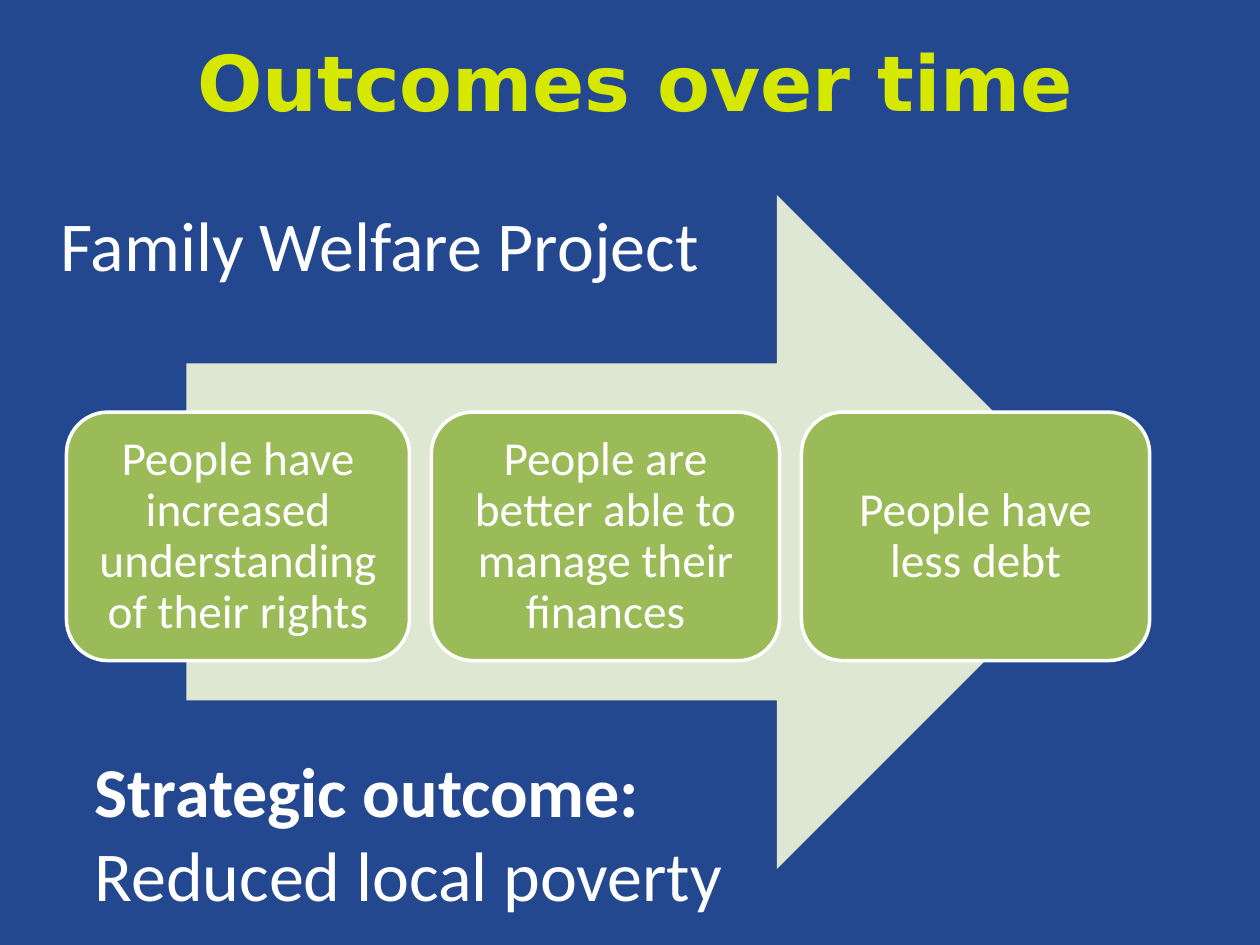
"""Build the "Outcomes over time" slide."""
from lxml import etree
from pptx import Presentation
from pptx.dml.color import RGBColor
from pptx.enum.shapes import MSO_SHAPE
from pptx.enum.text import MSO_ANCHOR, MSO_AUTO_SIZE, PP_ALIGN
from pptx.oxml.ns import qn
from pptx.util import Pt

ARROW, CARD = MSO_SHAPE.RIGHT_ARROW, MSO_SHAPE.ROUNDED_RECTANGLE
TOP, MIDDLE, BOTTOM = MSO_ANCHOR.TOP, MSO_ANCHOR.MIDDLE, MSO_ANCHOR.BOTTOM
LEFT, CENTER = PP_ALIGN.LEFT, PP_ALIGN.CENTER
NO_FIT, GROW = MSO_AUTO_SIZE.NONE, MSO_AUTO_SIZE.SHAPE_TO_FIT_TEXT

NAVY, LIME, WHITE = "244890", "D7E800", "FFFFFF"
PALE_GREEN, GREEN = "DEE7D1", "9BBB59"

CARD_LEFT, CARD_TOP, CARD_HEIGHT, CARD_GAP = 38, 235.5, 142, 12.5
CARDS = [
    ("People have increased understanding of their rights", 196, 7),
    ("People are better able to manage their finances", 199, 2),
    ("People have less debt", 199, 22),
]


def rgb(value):
    """Return the colour for a hex string."""
    return RGBColor.from_string(value)


def add_run(p, text, size=40, font="Calibri", color=WHITE, bold=False):
    """Append a formatted run to a paragraph."""
    r = p.add_run()
    r.text = text
    r.font.size, r.font.name, r.font.bold = Pt(size), font, bold
    r.font.color.rgb = rgb(color)


def set_text(sp, text, align=LEFT, anchor=TOP, fit=NO_FIT, spacing=1.0, **font):
    """Write one paragraph into a shape and return it."""
    tf = sp.text_frame
    tf.word_wrap, tf.auto_size, tf.vertical_anchor = True, fit, anchor
    p = tf.paragraphs[0]
    p.alignment, p.line_spacing, p.space_before = align, spacing, Pt(0)
    add_run(p, text, **font)
    return p


def place(sp, left, top, width, height):
    """Move and size a shape in points."""
    sp.left, sp.top, sp.width, sp.height = map(Pt, (left, top, width, height))
    return sp


def remove_bullet(p):
    """Take the bullet and hanging indent off a paragraph."""
    pPr = p._p.get_or_add_pPr()
    pPr.set("marL", "0")
    pPr.set("indent", "0")
    etree.SubElement(pPr, qn("a:buNone"))


def add_shape(s, kind, box, fill, line=None):
    """Add a flat preset shape, outlined if a line colour is given."""
    sp = s.shapes.add_shape(kind, *map(Pt, box))
    sp.shadow.inherit = False
    sp.fill.solid()
    sp.fill.fore_color.rgb = rgb(fill)
    if line:
        sp.line.color.rgb = rgb(line)
        sp.line.width = Pt(2)
    else:
        sp.line.fill.background()
    return sp


def add_cards(s):
    """Add the row of outcome cards."""
    left = CARD_LEFT
    for text, width, pad in CARDS:
        sp = add_shape(s, CARD, (left, CARD_TOP, width, CARD_HEIGHT), GREEN, WHITE)
        tf = sp.text_frame
        tf.margin_left = tf.margin_right = Pt(pad)
        tf.margin_top = tf.margin_bottom = 0
        set_text(sp, text, align=CENTER, anchor=MIDDLE, spacing=0.9, size=27)
        left += width + CARD_GAP


def main():
    """Build and save the slide."""
    prs = Presentation()
    prs.slide_width, prs.slide_height = Pt(720), Pt(540)
    s = prs.slides.add_slide(prs.slide_layouts[1])
    s.background.fill.solid()
    s.background.fill.fore_color.rgb = rgb(NAVY)

    title = place(s.shapes.title, 70.5, 15, 585.5, 61)
    set_text(title, "Outcomes over time", align=CENTER, anchor=BOTTOM,
             size=44, font="DejaVu Sans", color=LIME, bold=True)
    body = place(s.placeholders[1], 27.5, 111.5, 417.5, 73.5)
    remove_bullet(set_text(body, "Family Welfare Project"))

    add_shape(s, ARROW, (106.5, 111.5, 530, 385), PALE_GREEN)
    add_cards(s)

    sp = s.shapes.add_textbox(Pt(47), Pt(423.5), Pt(375), Pt(104.5))
    p = set_text(sp, "Strategic outcome: ", fit=GROW, bold=True)
    add_run(p, "Reduced local poverty")
    prs.save("out.pptx")


if __name__ == "__main__":
    main()
